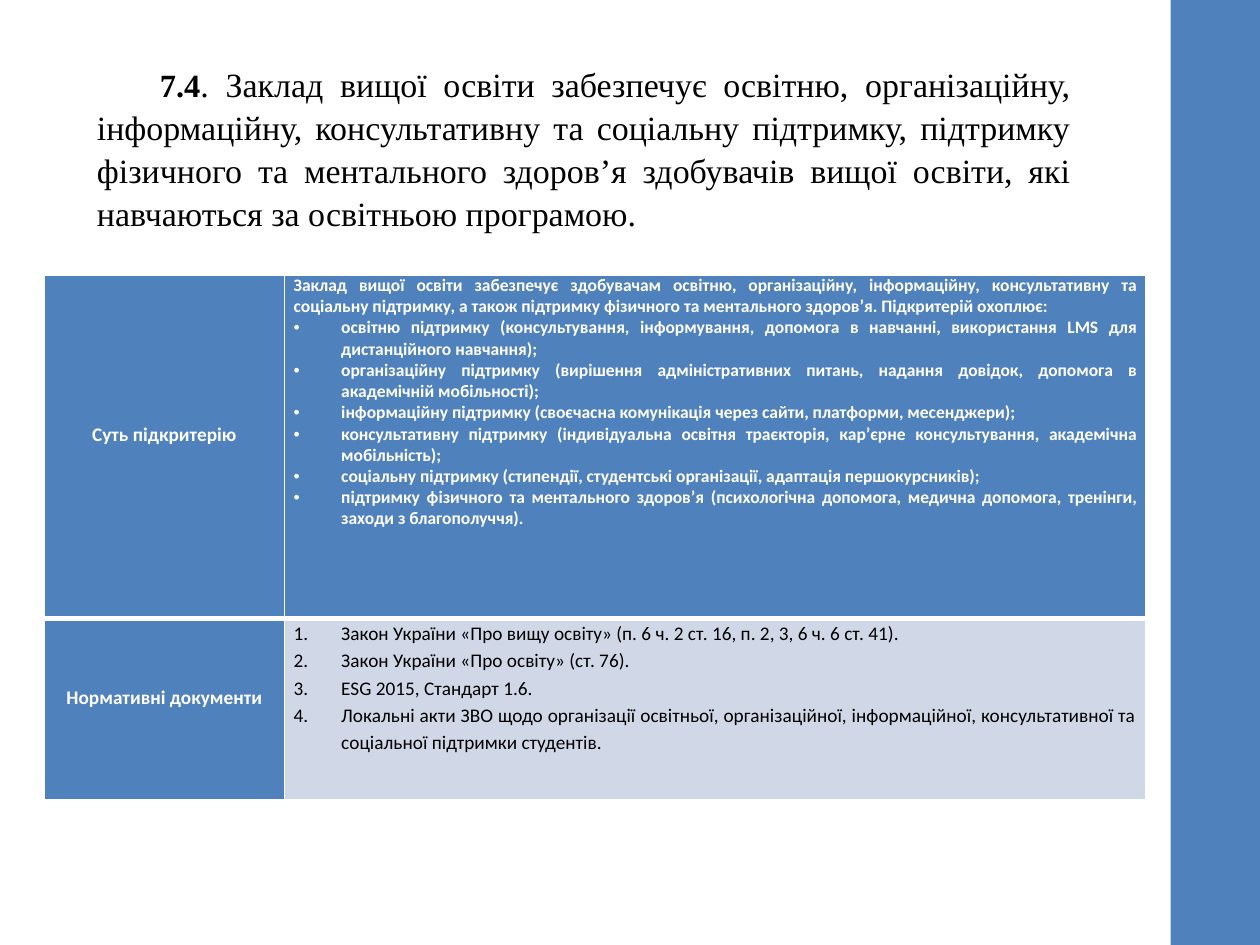
from lxml.etree import SubElement
from pptx import Presentation
from pptx.dml.color import RGBColor
from pptx.enum.shapes import MSO_SHAPE
from pptx.enum.text import MSO_ANCHOR, MSO_AUTO_SIZE, PP_ALIGN
from pptx.oxml.ns import qn
from pptx.util import Cm, Pt

COLORS = {"blue": "4F81BD", "pale": "D0D8E8", "white": "FFFFFF", "black": "000000"}
WIDE, HIGH = 25.4, 19.05

TITLE = [
    ("\t", 18.5, False),
    ("7.4", 18.5, True),
    (". Заклад вищої освіти забезпечує освітню, організаційну, інформаційну, "
     "консультативну та соціальну підтримку, підтримку фізичного та ментального "
     "здоровʼя здобувачів вищої освіти, які навчаються за освітньою програмою. ", 19.4, False),
]
LABELS = ["Суть підкритерію", "Нормативні документи"]
INTRO = ("Заклад вищої освіти забезпечує здобувачам освітню, організаційну, інформаційну, "
         "консультативну та соціальну підтримку, а також підтримку фізичного та ментального "
         "здоров’я. Підкритерій охоплює:")
KINDS = [
    "освітню підтримку (консультування, інформування, допомога в навчанні, "
    "використання LMS для дистанційного навчання);",
    "організаційну підтримку (вирішення адміністративних питань, надання довідок, "
    "допомога в академічній мобільності);",
    "інформаційну підтримку (своєчасна комунікація через сайти, платформи, месенджери);",
    "консультативну підтримку (індивідуальна освітня траєкторія, кар’єрне консультування, "
    "академічна мобільність);",
    "соціальну підтримку (стипендії, студентські організації, адаптація першокурсників);",
    "підтримку фізичного та ментального здоров’я (психологічна допомога, медична допомога, "
    "тренінги, заходи з благополуччя).",
]
LAWS = [
    "Закон України «Про вищу освіту» (п. 6 ч. 2 ст. 16, п. 2, 3, 6 ч. 6 ст. 41).",
    "Закон України «Про освіту» (ст. 76).",
    "ESG 2015, Стандарт 1.6.",
    "Локальні акти ЗВО щодо організації освітньої, організаційної, інформаційної, "
    "консультативної та соціальної підтримки студентів.",
]


def paint(fill, color):
    """Give a fill one solid colour."""
    fill.solid()
    fill.fore_color.rgb = RGBColor.from_string(COLORS[color])


def add_run(para, text, size, color, bold, face="Calibri"):
    """Add one formatted run to a paragraph."""
    run = para.add_run()
    run.text = text
    font = run.font
    font.name, font.size, font.bold = face, Pt(size), bold
    font.color.rgb = RGBColor.from_string(COLORS[color])


def add_mark(para, tag, **attrs):
    """Hang a paragraph behind a bullet or a number."""
    props = para._p.get_or_add_pPr()
    props.set("marL", str(Cm(0.96)))
    props.set("indent", str(-Cm(0.96)))
    if tag == "a:buChar":
        SubElement(props, qn("a:buFont"), typeface="Arial")
    SubElement(props, qn(tag), **attrs)
    tabs = SubElement(props, qn("a:tabLst"))
    SubElement(tabs, qn("a:tab"), pos=str(Cm(1.27)), algn="l")


def add_edges(cell, base):
    """Draw white borders round a cell, with its own bottom width."""
    props = cell._tc.get_or_add_tcPr()
    for side, width in (("L", 1), ("R", 1), ("T", 1), ("B", base)):
        line = SubElement(props, qn(f"a:ln{side}"), w=str(Pt(width)))
        fill = SubElement(line, qn("a:solidFill"))
        SubElement(fill, qn("a:srgbClr"), val=COLORS["white"])


def add_title(slide, left, top, width, height):
    """Place the justified heading in the title placeholder."""
    title = slide.shapes.title
    title.left, title.top, title.width, title.height = map(Cm, (left, top, width, height))
    frame = title.text_frame
    frame.word_wrap, frame.auto_size = True, MSO_AUTO_SIZE.NONE
    frame.vertical_anchor = MSO_ANCHOR.TOP
    para = frame.paragraphs[0]
    para.alignment, para.line_spacing = PP_ALIGN.JUSTIFY, 1.05
    for text, size, bold in TITLE:
        add_run(para, text, size, "black", bold, "Times New Roman")


def add_bar(slide, left, top, width, height):
    """Draw the plain side bar."""
    bar = slide.shapes.add_shape(MSO_SHAPE.RECTANGLE, *map(Cm, (left, top, width, height)))
    bar.shadow.inherit = False
    paint(bar.fill, "blue")
    bar.line.fill.background()


def fill_label(cell, text):
    """Write a row label, raised a little above the middle."""
    cell.vertical_anchor = MSO_ANCHOR.MIDDLE
    cell.margin_bottom = Cm(0.54)
    para = cell.text_frame.paragraphs[0]
    para.alignment, para.line_spacing = PP_ALIGN.CENTER, 1.15
    add_run(para, text, 11, "white", True)


def fill_list(cell, items, size, color, bold, gap, tag, **attrs):
    """Write a marked list after any text the cell holds."""
    frame = cell.text_frame
    for item in items:
        last = frame.paragraphs[-1]
        para = frame.add_paragraph() if last.runs else last
        add_mark(para, tag, **attrs)
        para.alignment, para.line_spacing = PP_ALIGN.JUSTIFY, gap
        add_run(para, item, size, color, bold)


def add_grid(slide, left, top, width, height):
    """Build the table of the criterion and its documents."""
    table = slide.shapes.add_table(2, 2, *map(Cm, (left, top, width, height))).table
    first, upper = 4.85, 6.93
    for col, size in zip(table.columns, (first, width - first)):
        col.width = Cm(size)
    for row, size in zip(table.rows, (upper, height - upper)):
        row.height = Cm(size)
    for row, label, base, color in zip(table.rows, LABELS, (3, 1), ("blue", "pale")):
        for cell, shade in zip(row.cells, ("blue", color)):
            cell.margin_left = cell.margin_right = Cm(0.18)
            cell.margin_top = cell.margin_bottom = 0
            add_edges(cell, base)
            paint(cell.fill, shade)
        fill_label(row.cells[0], label)
    essence, laws = table.cell(0, 1), table.cell(1, 1)
    intro = essence.text_frame.paragraphs[0]
    intro.alignment = PP_ALIGN.JUSTIFY
    add_run(intro, INTRO, 10, "white", True)
    fill_list(essence, KINDS, 10, "white", True, 1.0, "a:buChar", char="•")
    fill_list(laws, LAWS, 11, "black", False, 1.15, "a:buAutoNum", type="arabicPeriod")


def main():
    """Build and save the slide."""
    deck = Presentation()
    deck.slide_width, deck.slide_height = Cm(WIDE), Cm(HIGH)
    slide = deck.slides.add_slide(deck.slide_layouts[5])
    paint(slide.background.fill, "white")
    add_title(slide, 1.7, 1.12, 20.17, 3.99)
    add_bar(slide, WIDE - 1.8, 0, 1.8, HIGH)
    add_grid(slide, 0.89, 5.54, 22.2, 10.59)
    deck.save("out.pptx")


if __name__ == "__main__":
    main()
